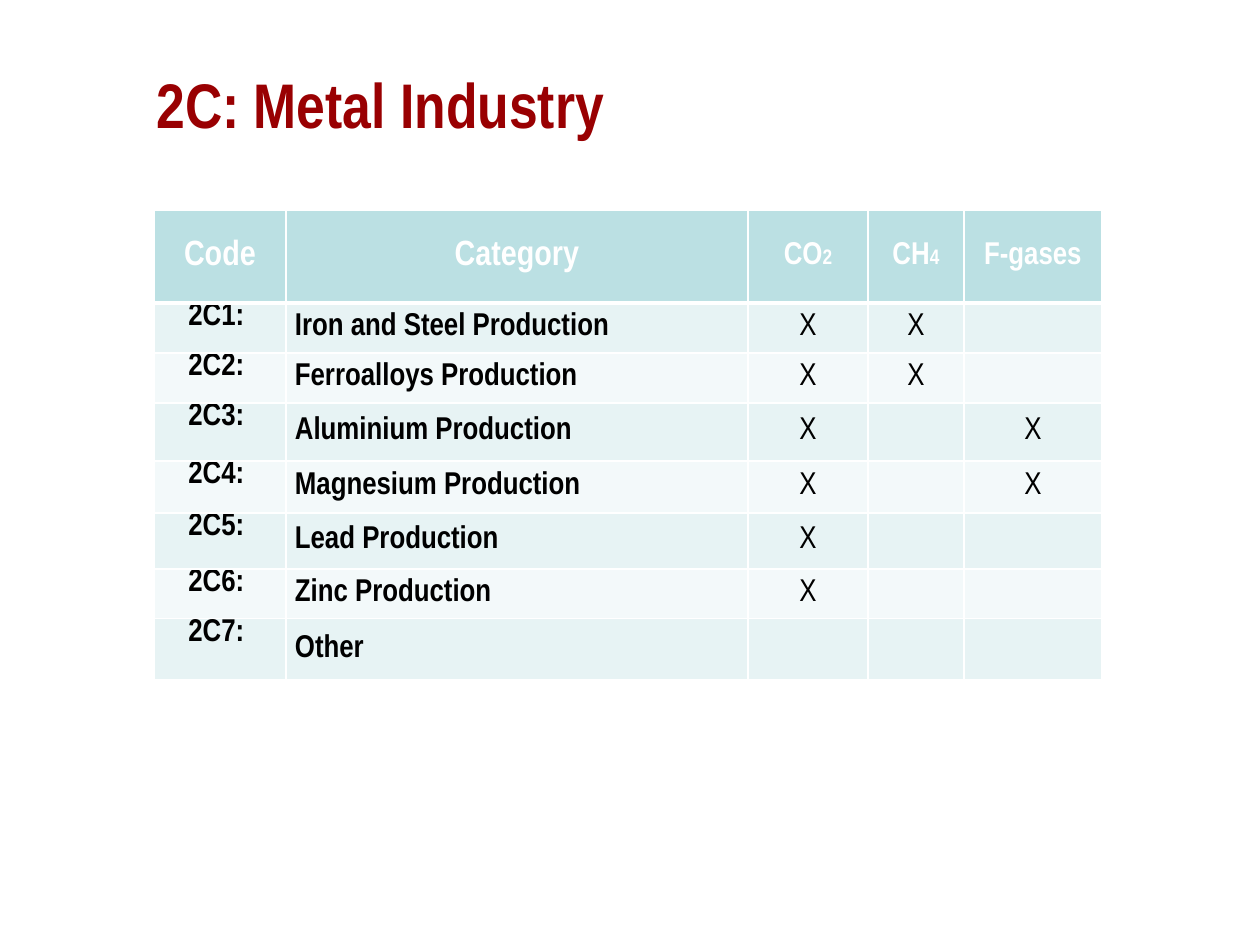
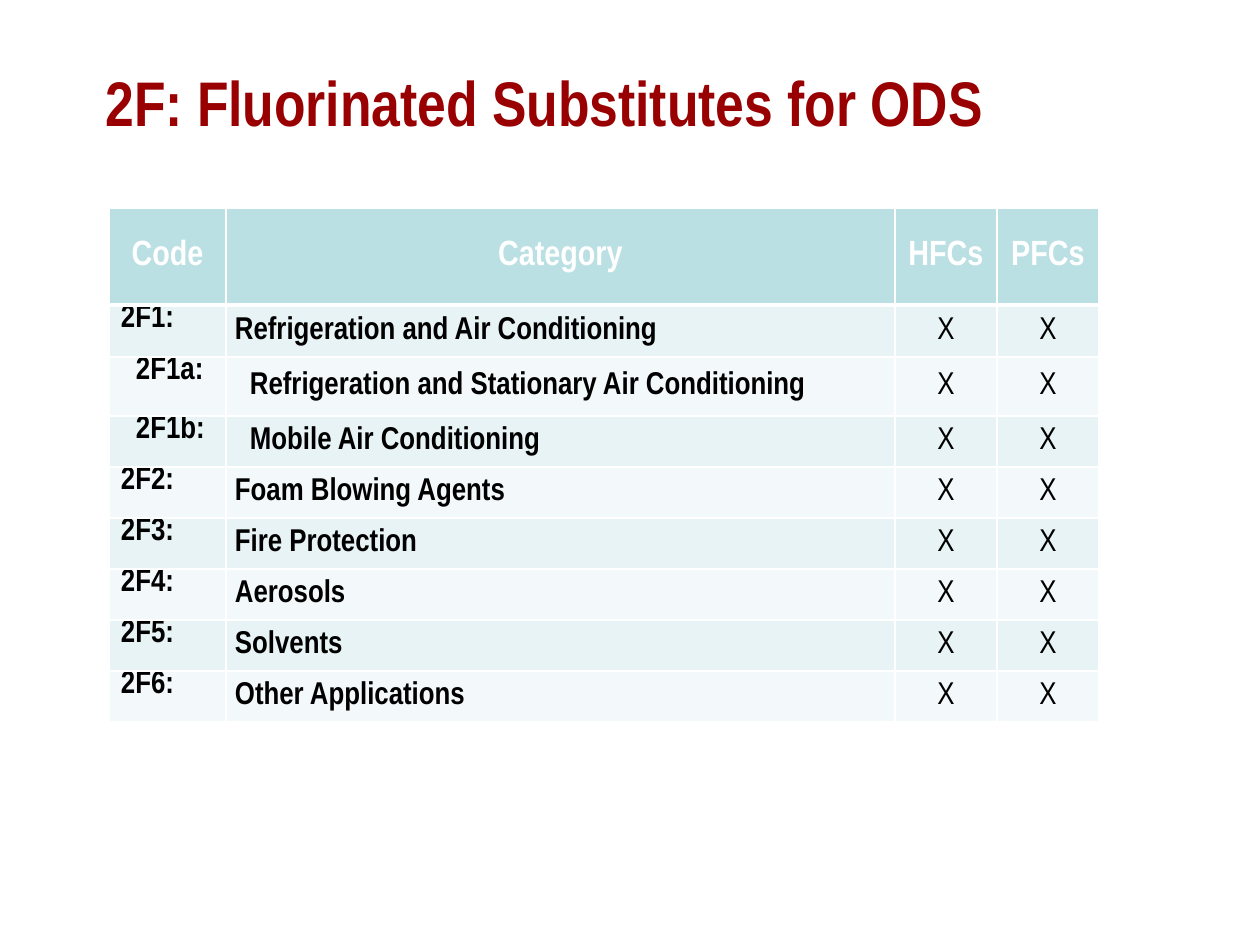
from dataclasses import dataclass

from lxml import etree
from pptx import Presentation
from pptx.dml.color import RGBColor
from pptx.enum.text import MSO_ANCHOR, PP_ALIGN
from pptx.oxml.ns import qn
from pptx.util import Emu, Pt

TOP, MIDDLE = MSO_ANCHOR.TOP, MSO_ANCHOR.MIDDLE
LEFT, CENTER = PP_ALIGN.LEFT, PP_ALIGN.CENTER
PX_PER_INCH = 126
SUB_INDENT = 15


def px(length):
    return Emu(round(length * 914400 / PX_PER_INCH))


@dataclass(frozen=True)
class Theme:
    font: str = "Arial Narrow"
    title: str = "990002"
    header_text: str = "FFFFFF"
    body_text: str = "000000"
    border: str = "FFFFFF"
    header_fill: str = "BBE0E3"
    bands: tuple = ("E7F3F4", "F3F9FA")
    title_size: int = 36
    header_size: int = 20
    gas_size: int = 18
    subscript_size: int = 12
    body_size: int = 18
    thin: int = 1
    thick: int = 3


class Deck:
    def __init__(self, theme):
        self.theme = theme
        self.presentation = Presentation()
        self.presentation.slide_width = px(1260)
        self.presentation.slide_height = px(945)
        self.slide = None

    def new_slide(self):
        blank = self.presentation.slide_layouts[6]
        self.slide = self.presentation.slides.add_slide(blank)

    def add_run(self, paragraph, text, size, color, bold=True):
        run = paragraph.add_run()
        run.text = text
        font = run.font
        font.name, font.size, font.bold = self.theme.font, Pt(size), bold
        font.color.rgb = RGBColor.from_string(color)

    def title(self, text, left, top, width, height):
        box = self.slide.shapes.add_textbox(px(left), px(top), px(width), px(height))
        frame = box.text_frame
        frame.word_wrap = True
        frame.vertical_anchor = MIDDLE
        self.add_run(frame.paragraphs[0], text, self.theme.title_size, self.theme.title)

    def borders(self, cell, top, bottom):
        thin = self.theme.thin
        properties = cell._tc.get_or_add_tcPr()
        sides = (("a:lnL", thin), ("a:lnR", thin), ("a:lnT", top), ("a:lnB", bottom))
        for position, (side, width) in enumerate(sides):
            line = etree.Element(qn(side), w=str(Pt(width)))
            fill = etree.SubElement(line, qn("a:solidFill"))
            etree.SubElement(fill, qn("a:srgbClr"), val=self.theme.border)
            properties.insert(position, line)

    def cell(self, cell, runs, fill, align=CENTER, anchor=MIDDLE, margin=9,
             indent=0, top=1, bottom=1):
        cell.fill.solid()
        cell.fill.fore_color.rgb = RGBColor.from_string(fill)
        cell.vertical_anchor = anchor
        cell.margin_left = px(margin + indent)
        cell.margin_right = px(margin)
        cell.margin_top = cell.margin_bottom = 0
        paragraph = cell.text_frame.paragraphs[0]
        paragraph.alignment = align
        for text, size, color, bold in runs:
            self.add_run(paragraph, text, size, color, bold)
        if not runs:
            paragraph.font.size = Pt(self.theme.body_size)
        self.borders(cell, top, bottom)

    def category_table(self, left, top, widths, heights, headings, categories,
                       code_align, header_top):
        theme = self.theme
        frame = self.slide.shapes.add_table(
            len(heights), len(widths), px(left), px(top), px(sum(widths)), px(sum(heights)))
        table = frame.table
        table.first_row = table.horz_banding = False
        for column, width in zip(table.columns, widths):
            column.width = px(width)
        for row, height in zip(table.rows, heights):
            row.height = px(height)

        for column, heading in enumerate(headings):
            runs = [(text, size, theme.header_text, True) for text, size in heading]
            self.cell(table.cell(0, column), runs, theme.header_fill,
                      top=header_top, bottom=theme.thick)

        for row, (code, category, gases, indent) in enumerate(categories, 1):
            look = {"fill": theme.bands[(row - 1) % 2],
                    "top": theme.thick if row == 1 else theme.thin}
            body = (theme.body_size, theme.body_text)
            self.cell(table.cell(row, 0), [(code, *body, True)], align=code_align,
                      anchor=TOP, margin=12, indent=indent, **look)
            self.cell(table.cell(row, 1), [(category, *body, True)], align=LEFT,
                      indent=indent, **look)
            for column, emitted in enumerate(gases, 2):
                mark = [("X", *body, False)] if emitted else []
                self.cell(table.cell(row, column), mark, **look)


def main():
    theme = Theme()
    deck = Deck(theme)
    code_heading = [("Code", theme.header_size)]
    category_heading = [("Category", theme.header_size)]

    deck.new_slide()
    deck.title("2C: Metal Industry", 144, 55, 699, 97)
    metals = (
        ("Iron and Steel Production", (1, 1, 0)),
        ("Ferroalloys Production", (1, 1, 0)),
        ("Aluminium Production", (1, 0, 1)),
        ("Magnesium Production", (1, 0, 1)),
        ("Lead Production", (1, 0, 0)),
        ("Zinc Production", (1, 0, 0)),
        ("Other", (0, 0, 0)),
    )
    deck.category_table(
        154, 209, (132, 462, 120, 96, 138), (94, 50, 50, 58, 52, 56, 50, 61),
        (code_heading, category_heading,
         [("CO", theme.gas_size), ("2", theme.subscript_size)],
         [("CH", theme.gas_size), ("4", theme.subscript_size)],
         [("F-gases", theme.gas_size)]),
        [(f"2C{number}: ", name, gases, 0)
         for number, (name, gases) in enumerate(metals, 1)],
        CENTER, theme.thick)

    deck.new_slide()
    deck.title("2F: Fluorinated Substitutes for ODS", 93, 40, 1072, 122)
    substitutes = (
        ("2F1:", "Refrigeration and Air Conditioning", 0),
        ("2F1a:", "Refrigeration and Stationary Air Conditioning", SUB_INDENT),
        ("2F1b:", "Mobile Air Conditioning", SUB_INDENT),
        ("2F2:", "Foam Blowing Agents", 0),
        ("2F3:", "Fire Protection", 0),
        ("2F4:", "Aerosols", 0),
        ("2F5:", "Solvents", 0),
        ("2F6:", "Other Applications", 0),
    )
    deck.category_table(
        109, 208, (117, 669, 102, 102), (97, 52, 59, *[51] * 6),
        (code_heading, category_heading,
         [("HFCs", theme.header_size)], [("PFCs", theme.header_size)]),
        [(code, name, (1, 1), indent) for code, name, indent in substitutes],
        LEFT, theme.thin)

    deck.presentation.save("out.pptx")


if __name__ == "__main__":
    main()
